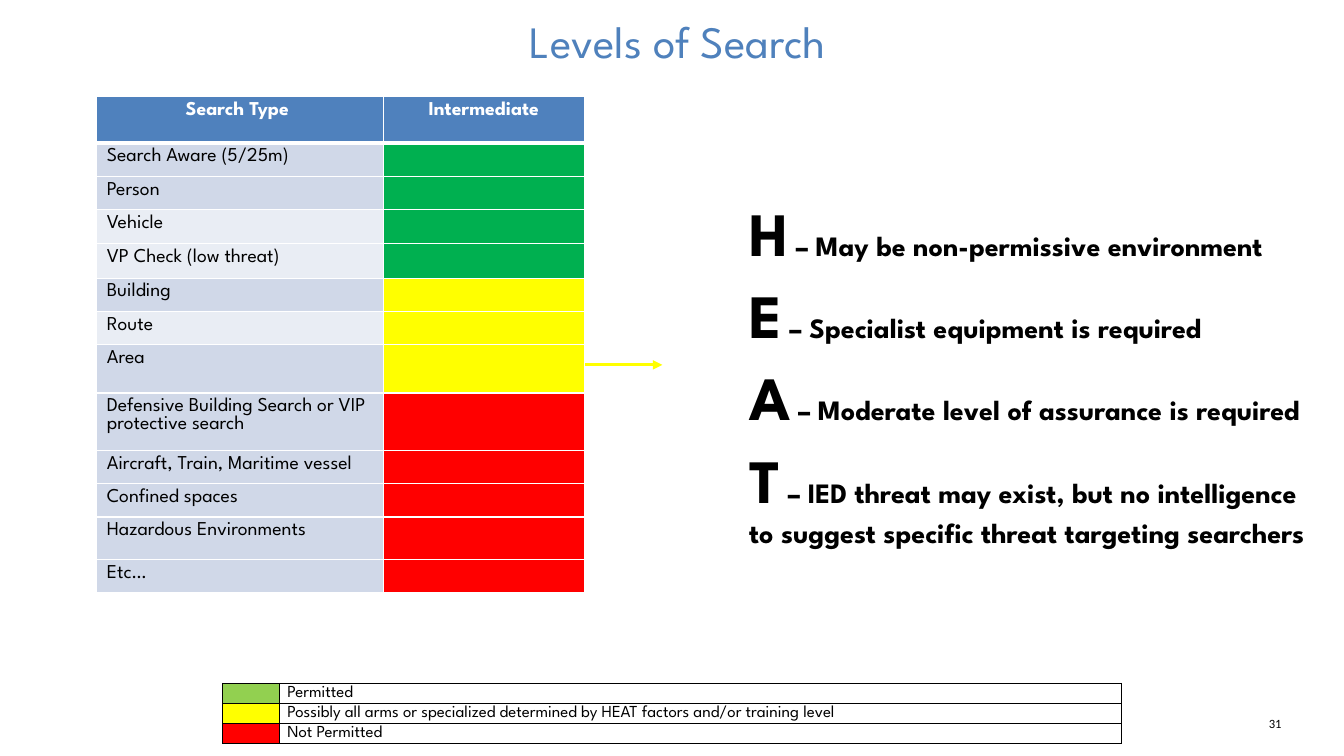
from lxml import etree
from pptx import Presentation
from pptx.dml.color import RGBColor
from pptx.enum.shapes import MSO_CONNECTOR
from pptx.enum.text import MSO_ANCHOR, MSO_AUTO_SIZE, PP_ALIGN
from pptx.oxml.ns import qn
from pptx.util import Inches, Pt

STRAIGHT = MSO_CONNECTOR.STRAIGHT
TOP, MIDDLE, BOTTOM = MSO_ANCHOR.TOP, MSO_ANCHOR.MIDDLE, MSO_ANCHOR.BOTTOM
NO_AUTOFIT = MSO_AUTO_SIZE.NONE
LEFT, CENTER, RIGHT = PP_ALIGN.LEFT, PP_ALIGN.CENTER, PP_ALIGN.RIGHT

SPARTAN = "League Spartan"
BLACK, WHITE, BLUE = "000000", "FFFFFF", "4F81BD"
GREEN, YELLOW, RED = "00B050", "FFFF00", "FF0000"
DARK_BAND, LIGHT_BAND = "D0D8E8", "E9EDF4"

SEARCH_TYPES = [
    ("Search Aware (5/25m)", DARK_BAND, GREEN, 0.33),
    ("Person", DARK_BAND, GREEN, 0.33),
    ("Vehicle", LIGHT_BAND, GREEN, 0.34),
    ("VP Check (low threat)", LIGHT_BAND, GREEN, 0.34),
    ("Building", DARK_BAND, YELLOW, 0.33),
    ("Route", LIGHT_BAND, YELLOW, 0.33),
    ("Area", DARK_BAND, YELLOW, 0.48),
    ("Defensive Building Search or VIP protective search", DARK_BAND, RED, 0.57),
    ("Aircraft, Train, Maritime vessel", DARK_BAND, RED, 0.33),
    ("Confined spaces", DARK_BAND, RED, 0.33),
    ("Hazardous Environments", DARK_BAND, RED, 0.42),
    ("Etc…", DARK_BAND, RED, 0.33),
]
LEGEND = [
    ("92D050", "Permitted"),
    (YELLOW, "Possibly all arms or specialized determined by HEAT factors and/or training level"),
    (RED, "Not Permitted"),
]
HEAT_FACTORS = [
    ("H", "May be non-permissive environment"),
    ("E", "Specialist equipment is required"),
    ("A", "Moderate level of assurance is required"),
    ("T", "IED threat may exist, but no intelligence to suggest specific threat targeting searchers"),
]


def rgb(color):
    """Turn a hex string into a colour."""
    return RGBColor.from_string(color)


def add_span(para, text, size, color=BLACK, bold=False, font=SPARTAN):
    """Add one formatted run to a paragraph."""
    span = para.add_run()
    span.text = text
    span.font.name = font
    span.font.size = Pt(size)
    span.font.bold = bold
    span.font.color.rgb = rgb(color)


def place(shape, left, top, width, height):
    """Move and size a shape, in inches."""
    shape.left, shape.top = Inches(left), Inches(top)
    shape.width, shape.height = Inches(width), Inches(height)


def set_frame(frame, anchor):
    """Make a text frame wrap, keep its size and anchor its text."""
    frame.word_wrap = True
    frame.auto_size = NO_AUTOFIT
    frame.vertical_anchor = anchor


def set_borders(cell, color, top=1, bottom=1):
    """Draw the four borders of a cell."""
    properties = cell._tc.get_or_add_tcPr()
    for side, width in (("L", 1), ("R", 1), ("T", top), ("B", bottom)):
        line = etree.SubElement(properties, qn(f"a:ln{side}"), w=str(Pt(width)))
        fill = etree.SubElement(line, qn("a:solidFill"))
        etree.SubElement(fill, qn("a:srgbClr"), val=color)


def fill_cell(cell, fill, text, size, color=BLACK, bold=False, align=LEFT):
    """Fill a cell, if it has a colour, and write its text."""
    if fill:
        cell.fill.solid()
        cell.fill.fore_color.rgb = rgb(fill)
    else:
        cell.fill.background()
    para = cell.text_frame.paragraphs[0]
    para.alignment = align
    para.space_after = Pt(6)
    if text:
        add_span(para, text, size, color, bold)
    else:
        end = etree.SubElement(para._p, qn("a:endParaRPr"), sz=str(size * 100))
        etree.SubElement(end, qn("a:latin"), typeface=SPARTAN)


def add_grid(page, left, top, widths, heights):
    """Add an empty table with the given column widths and row heights."""
    frame = page.shapes.add_table(
        len(heights), len(widths), Inches(left), Inches(top),
        Inches(sum(widths)), Inches(sum(heights)))
    for column, width in zip(frame.table.columns, widths):
        column.width = Inches(width)
    for row, height in zip(frame.table.rows, heights):
        row.height = Inches(height)
    return frame.table


def add_search_table(page):
    """Add the table of search types and their permission colours."""
    heights = [0.46] + [height for *_, height in SEARCH_TYPES]
    table = add_grid(page, 0.96, 0.96, [2.84, 2], heights)
    for column, heading in enumerate(("Search Type ", "Intermediate")):
        cell = table.cell(0, column)
        set_borders(cell, WHITE, bottom=3)
        fill_cell(cell, BLUE, heading, 14, WHITE, True, CENTER)
    for row, (name, band, level, _) in enumerate(SEARCH_TYPES, 1):
        for column, (fill, text) in enumerate(((band, name), (level, ""))):
            cell = table.cell(row, column)
            set_borders(cell, WHITE, top=3 if row == 1 else 1)
            fill_cell(cell, fill, text, 14)


def add_legend(page):
    """Add the colour key at the foot of the page."""
    table = add_grid(page, 2.21, 6.78, [0.56, 8.35], [0.2] * len(LEGEND))
    for row, (color, meaning) in enumerate(LEGEND):
        for column, (fill, text) in enumerate(((color, ""), (None, meaning))):
            cell = table.cell(row, column)
            cell.margin_left = cell.margin_right = Inches(0.08)
            cell.margin_top = cell.margin_bottom = 0
            cell.vertical_anchor = MIDDLE
            set_borders(cell, BLACK)
            fill_cell(cell, fill, text, 12)


def add_arrow(page, left, right, height, color):
    """Add a level arrow pointing right."""
    arrow = page.shapes.add_connector(
        STRAIGHT, Inches(left), Inches(height), Inches(right), Inches(height))
    arrow.line.color.rgb = rgb(color)
    arrow.line.width = Pt(2.25)
    etree.SubElement(arrow.line._get_or_add_ln(), qn("a:tailEnd"), type="triangle")
    etree.SubElement(arrow._element.spPr, qn("a:effectLst"))


def write_title(title):
    """Place and write the page title."""
    place(title, 3.07, 0.08, 7.2, 0.64)
    set_frame(title.text_frame, BOTTOM)
    para = title.text_frame.paragraphs[0]
    para.alignment = CENTER
    add_span(para, " Levels of Search", 32, "4F81BC")


def write_factors(body):
    """Place the body and write the HEAT factors."""
    place(body, 7.08, 1.88, 6.01, 4.66)
    frame = body.text_frame
    set_frame(frame, TOP)
    for index, (letter, meaning) in enumerate(HEAT_FACTORS):
        para = frame.add_paragraph() if index else frame.paragraphs[0]
        properties = para._p.get_or_add_pPr()
        properties.set("marL", str(Inches(0.25)))
        properties.set("indent", "0")
        etree.SubElement(properties, qn("a:buNone"))
        para.alignment = LEFT
        para.space_before = Pt(0)
        para.space_after = Pt(6)
        add_span(para, letter, 44, bold=True)
        add_span(para, f" – {meaning}", 20, bold=True)


def add_page_number(page, number):
    """Add the page number at the lower right."""
    box = page.shapes.add_textbox(
        Inches(12.08), Inches(7.05), Inches(0.73), Inches(0.25))
    set_frame(box.text_frame, MIDDLE)
    para = box.text_frame.paragraphs[0]
    para.alignment = RIGHT
    add_span(para, number, 9, font="Calibri")


def main():
    """Build the page and save the deck."""
    deck = Presentation()
    deck.slide_width, deck.slide_height = Inches(13.33), Inches(7.5)
    page = deck.slides.add_slide(deck.slide_layouts[1])
    write_title(page.shapes.title)
    write_factors(page.placeholders[1])
    add_legend(page)
    add_arrow(page, 5.8, 6.57, 3.62, YELLOW)
    add_search_table(page)
    add_page_number(page, "31")
    deck.save("out.pptx")


if __name__ == "__main__":
    main()
